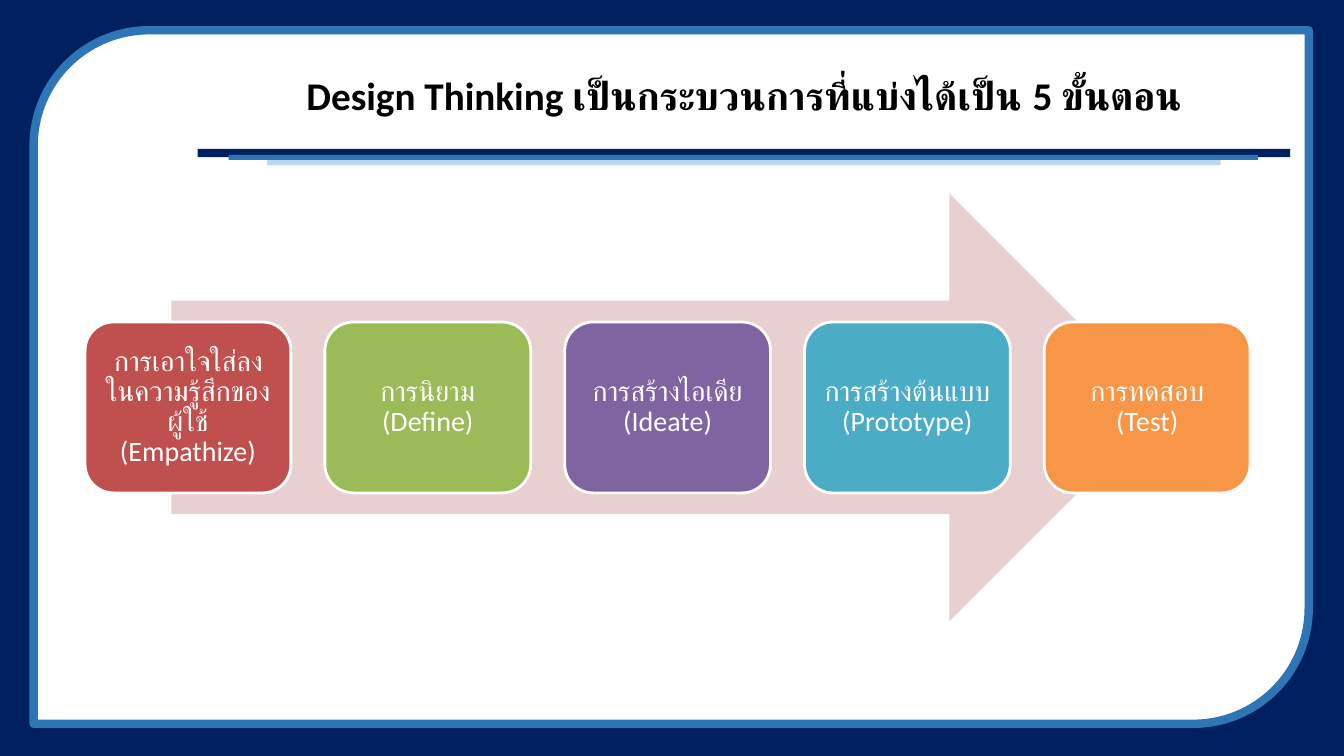
"""Build a slide showing the five steps of Design Thinking along an arrow."""
import pptx
import pptx.dml.color
import pptx.enum.shapes
import pptx.enum.text
import pptx.util

Pt = pptx.util.Pt
RGBColor = pptx.dml.color.RGBColor
SHAPES = pptx.enum.shapes.MSO_SHAPE

NAVY = RGBColor(0x00, 0x20, 0x60)
BLUE = RGBColor(0x2E, 0x75, 0xB6)
PALE_BLUE = RGBColor(0xBD, 0xD7, 0xEE)
PALE_RED = RGBColor(0xE8, 0xD0, 0xD0)
RED = RGBColor(0xC0, 0x50, 0x4D)
GREEN = RGBColor(0x9B, 0xBB, 0x59)
PURPLE = RGBColor(0x80, 0x64, 0xA2)
TEAL = RGBColor(0x4B, 0xAC, 0xC6)
ORANGE = RGBColor(0xF7, 0x96, 0x46)
WHITE = RGBColor(0xFF, 0xFF, 0xFF)
BLACK = RGBColor(0x00, 0x00, 0x00)

presentation = pptx.Presentation()
presentation.slide_width = Pt(960)
presentation.slide_height = Pt(540)
slide = presentation.slides.add_slide(presentation.slide_layouts[6])


def add_filled_shape(kind, left, top, width, height, fill, line=None, line_width=0):
    shape = slide.shapes.add_shape(kind, Pt(left), Pt(top), Pt(width), Pt(height))
    shape.shadow.inherit = False
    shape.fill.solid()
    shape.fill.fore_color.rgb = fill
    if line is None:
        shape.line.fill.background()
    else:
        shape.line.color.rgb = line
        shape.line.width = Pt(line_width)
    return shape


def write_text(shape, text, size, color, margin, bold=False):
    frame = shape.text_frame
    frame.word_wrap = True
    frame.vertical_anchor = pptx.enum.text.MSO_ANCHOR.MIDDLE
    frame.margin_left = frame.margin_right = Pt(margin)
    frame.margin_top = frame.margin_bottom = Pt(margin)
    paragraph = frame.paragraphs[0]
    paragraph.alignment = pptx.enum.text.PP_ALIGN.CENTER
    paragraph.line_spacing = 0.9
    run = paragraph.add_run()
    run.text = text
    run.font.name = "Calibri"
    run.font.size = Pt(size)
    run.font.bold = bold
    run.font.color.rgb = color


add_filled_shape(SHAPES.RECTANGLE, 0, 0, 960, 540, NAVY)
add_filled_shape(SHAPES.ROUND_2_DIAG_RECTANGLE, 24, 21.6, 910.8, 495.4, WHITE, BLUE, 6)

title_rules = [
    (141.1, 106.4, 780.5, 5.8, NAVY),
    (163.4, 110.7, 735.1, 3.6, BLUE),
    (190.8, 114.3, 681.1, 3.6, PALE_BLUE),
]
for left, top, width, height, color in title_rules:
    add_filled_shape(SHAPES.RECTANGLE, left, top, width, height, color)

title = slide.shapes.add_textbox(Pt(141.1), Pt(35.3), Pt(780.5), Pt(69.8))
write_text(title, "Design Thinking เป็นกระบวนการที่แบ่งได้เป็น 5 ขั้นตอน", 28, BLACK, 4, bold=True)

add_filled_shape(SHAPES.RIGHT_ARROW, 122.4, 138.4, 708.5, 305.3, PALE_RED)

steps = [
    ("การเอาใจใส่ลงในความรู้สึกของผู้ใช้ (Empathize)", RED),
    ("การนิยาม (Define)", GREEN),
    ("การสร้างไอเดีย (Ideate)", PURPLE),
    ("การสร้างต้นแบบ (Prototype)", TEAL),
    ("การทดสอบ (Test)", ORANGE),
]
card_left, card_pitch = 60.8, 171.3
for index, (text, color) in enumerate(steps):
    card = add_filled_shape(SHAPES.ROUNDED_RECTANGLE, card_left + index * card_pitch,
                            230, 147, 122.1, color, WHITE, 2)
    write_text(card, text, 20, WHITE, 6)

presentation.save("out.pptx")
